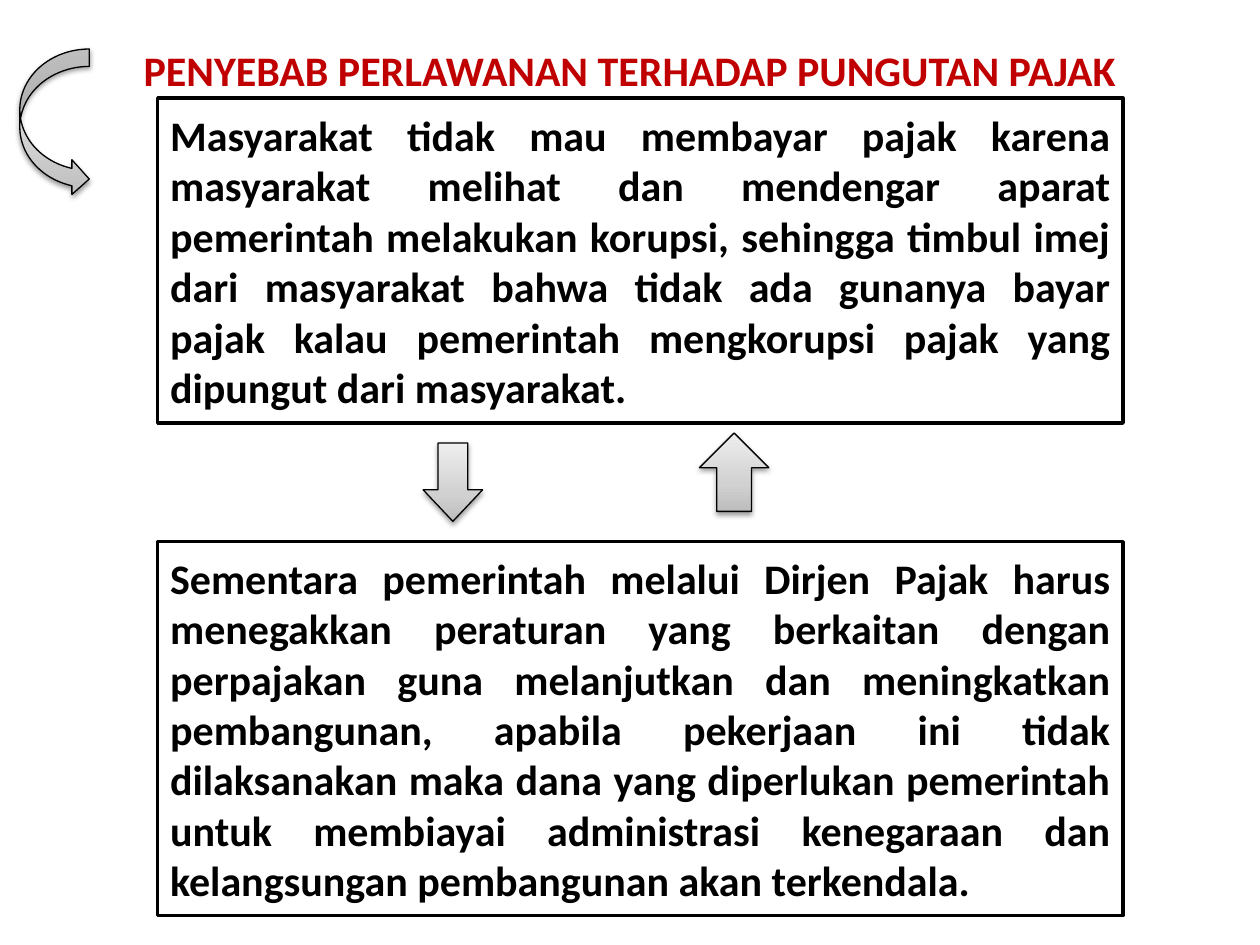
from copy import deepcopy

from lxml import etree
from pptx import Presentation
from pptx import util as u
from pptx.dml.color import RGBColor
from pptx.enum import shapes, text
from pptx.oxml.ns import qn

COLORS = {"title": "C00000", "ink": "000000", "paper": "FFFFFF"}
GRADIENT = [(0, "BDBDBD"), (0.35, "D1D1D1"), (1, "EEEEEE")]
FONT, FONT_SIZE = "Calibri", 24
BOX_LEFT, BOX_WIDTH = 3.18, 19.46

TITLE = "PENYEBAB PERLAWANAN TERHADAP PUNGUTAN PAJAK"
BOXES = [
    (1.98, 6.55, "Masyarakat tidak mau membayar pajak karena masyarakat melihat dan "
     "mendengar aparat pemerintah melakukan korupsi, sehingga timbul imej dari "
     "masyarakat bahwa tidak ada gunanya bayar pajak kalau pemerintah mengkorupsi "
     "pajak yang dipungut dari masyarakat."),
    (10.92, 7.54, "Sementara pemerintah melalui Dirjen Pajak harus menegakkan peraturan "
     "yang berkaitan dengan perpajakan guna melanjutkan dan meningkatkan pembangunan, "
     "apabila pekerjaan ini tidak dilaksanakan maka dana yang diperlukan pemerintah "
     "untuk membiayai administrasi kenegaraan dan kelangsungan pembangunan akan "
     "terkendala."),
]
KIND = shapes.MSO_SHAPE
ARROWS = [
    (KIND.CURVED_RIGHT_ARROW, (0.4, 0.99, 1.4, 2.97), []),
    (KIND.UP_ARROW, (14.1, 8.73, 1.4, 1.58), []),
    (KIND.DOWN_ARROW, (8.53, 8.93, 1.2, 1.58), [0.5, 0.53]),
]


def color(name):
    return RGBColor.from_string(COLORS[name])


def lengths(values):
    return [u.Cm(value) for value in values]


def write(shape, content, alignment, color_name):
    frame = shape.text_frame
    frame.word_wrap = True
    frame.vertical_anchor = text.MSO_ANCHOR.MIDDLE
    paragraph = frame.paragraphs[0]
    paragraph.text = content
    paragraph.alignment = alignment
    paragraph.font.name = FONT
    paragraph.font.size = u.Pt(FONT_SIZE)
    paragraph.font.bold = True
    paragraph.font.color.rgb = color(color_name)


def add_outlined(slide, kind, place, line_width):
    shape = slide.shapes.add_shape(kind, *lengths(place))
    shape.shadow.inherit = False
    shape.line.color.rgb = color("ink")
    shape.line.width = u.Pt(line_width)
    return shape


def add_gradient(shape):
    shape.fill.gradient()
    shape.fill.gradient_angle = 90
    stop_list = shape.element.spPr.find(".//" + qn("a:gsLst"))
    stop_list.append(deepcopy(stop_list[-1]))
    for stop, (position, hex_color) in zip(shape.fill.gradient_stops, GRADIENT):
        stop.position = position
        stop.color.rgb = RGBColor.from_string(hex_color)


def add_shadow(shape):
    effects = shape.element.spPr.find(qn("a:effectLst"))
    shadow = etree.SubElement(effects, qn("a:outerShdw"), blurRad=str(u.Pt(3.1)),
                              dist=str(u.Pt(1.6)), dir="5400000", rotWithShape="0")
    shade = etree.SubElement(shadow, qn("a:srgbClr"), val=COLORS["ink"])
    etree.SubElement(shade, qn("a:alpha"), val="38000")


def add_arrow(slide, kind, place, adjustments):
    arrow = add_outlined(slide, kind, place, 0.75)
    for index, value in enumerate(adjustments):
        arrow.adjustments[index] = value
    add_gradient(arrow)
    add_shadow(arrow)


def add_box(slide, top, height, content):
    box = add_outlined(slide, KIND.RECTANGLE, (BOX_LEFT, top, BOX_WIDTH, height), 2)
    box.fill.solid()
    box.fill.fore_color.rgb = color("paper")
    write(box, content, text.PP_ALIGN.JUSTIFY, "ink")


def main():
    presentation = Presentation()
    presentation.slide_width, presentation.slide_height = lengths((25.4, 19.05))
    slide = presentation.slides.add_slide(presentation.slide_layouts[6])
    title = slide.shapes.add_textbox(*lengths((1.27, 0.41, 22.86, 1.98)))
    write(title, TITLE, text.PP_ALIGN.CENTER, "title")
    for box in BOXES:
        add_box(slide, *box)
    for arrow in ARROWS:
        add_arrow(slide, *arrow)
    presentation.save("out.pptx")


if __name__ == "__main__":
    main()
